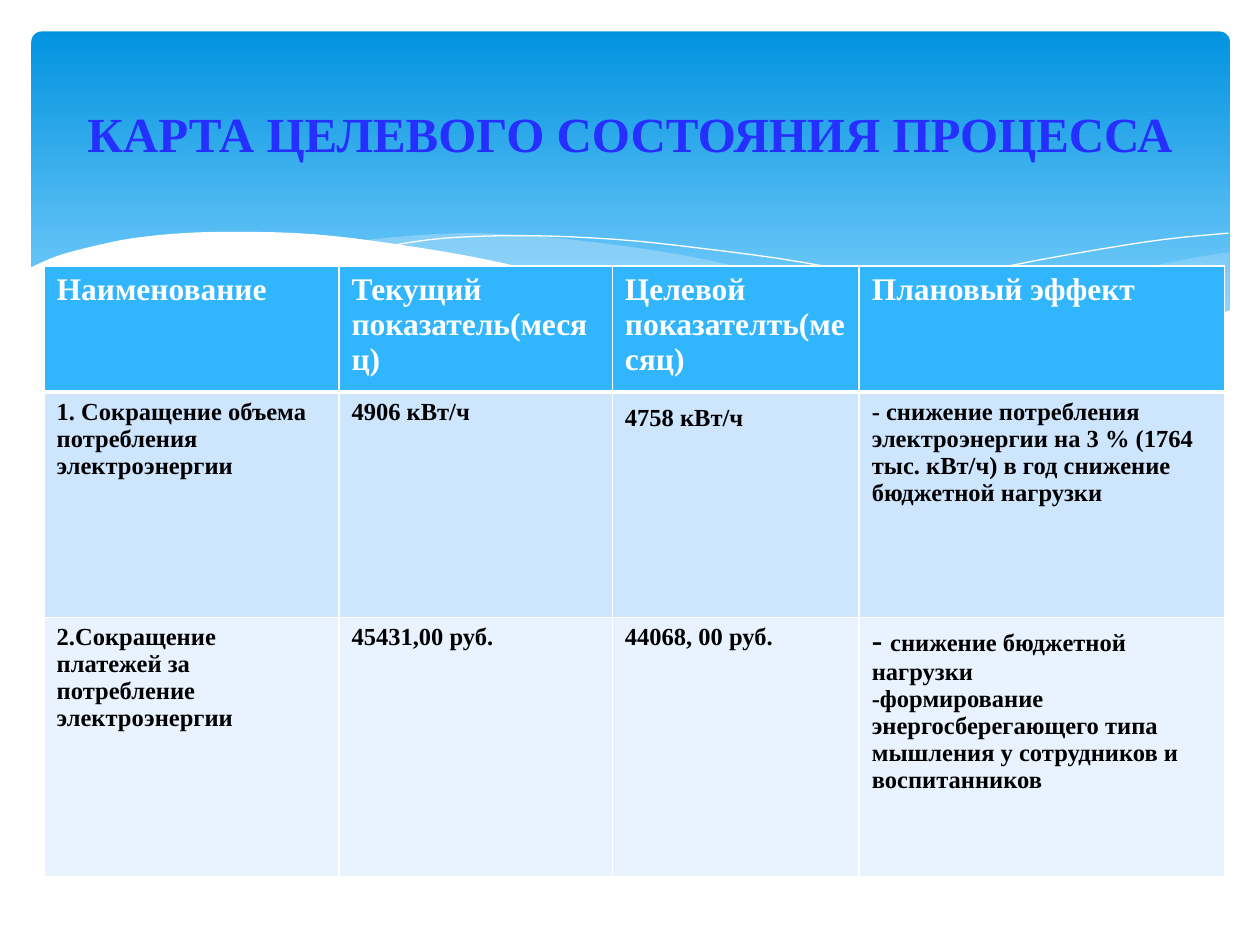
from dataclasses import dataclass
from typing import Optional

from lxml.etree import SubElement
from pptx import Presentation
from pptx.dml.color import RGBColor
from pptx.enum.shapes import MSO_SHAPE
from pptx.enum.text import MSO_ANCHOR, PP_ALIGN
from pptx.oxml.ns import qn
from pptx.util import Pt

PX = 9144  # 100 px to the inch
FONT = "Times New Roman"
WHITE = RGBColor(0xFF, 0xFF, 0xFF)
BLACK = RGBColor(0, 0, 0)
TITLE = RGBColor(0x25, 0x2F, 0xFF)
DEEP = RGBColor(0x02, 0x93, 0xE0)
LIGHT = RGBColor(0x83, 0xD3, 0xFE)
MIST = RGBColor(0xC6, 0xE7, 0xFC)
HEAD = RGBColor(0x31, 0xB6, 0xFD)
BANDS = (RGBColor(0xCE, 0xE5, 0xFE), RGBColor(0xE8, 0xF3, 0xFF))

Point = tuple[float, float]


@dataclass
class Wave:
    edges: list[list[Point]]  # each edge is a smooth curve through its knots
    fill: Optional[RGBColor] = None  # without a fill, the wave is a thin line
    alpha: int = 100


@dataclass
class Row:
    height: int
    fill: RGBColor
    color: RGBColor
    size: int
    texts: list[str]


WAVES = [
    Wave([[(976, 200), (935, 207), (876, 220), (805, 237), (729, 253), (661, 265)],
          [(661, 265), (719, 271), (781, 277), (824, 277), (881, 273), (935, 262),
           (976, 247)]], MIST, 29),
    Wave([[(893, 273), (807, 260), (706, 240), (629, 222), (569, 208), (514, 198),
           (442, 189), (380, 185), (328, 187), (286, 191)],
          [(286, 191), (362, 203), (449, 222), (566, 248), (650, 264), (736, 275),
           (807, 278), (867, 276), (893, 273)]], MIST, 40),
    Wave([[(309, 195), (353, 189), (416, 187), (489, 190), (556, 197), (636, 208),
           (727, 226), (795, 241), (869, 261), (907, 272)]]),
    Wave([[(613, 257), (672, 241), (748, 223), (806, 210), (866, 199), (924, 190),
           (975, 185)]]),
    Wave([[(977, 246), (920, 265), (863, 274), (809, 277), (744, 274), (668, 265),
           (579, 250), (475, 227), (391, 207), (316, 194), (250, 186), (193, 184),
           (146, 185), (106, 189), (76, 195), (46, 203), (23, 213)],
          [(23, 329), (977, 329)]], WHITE),
]

COLS = [234, 217, 196, 290]
ROWS = [
    Row(94, HEAD, WHITE, 18, [
        "Наименование", "Текущий показатель(месяц)",
        "Целевой показателть(месяц)", "Плановый эффект"]),
    Row(179, BANDS[0], BLACK, 14, [
        "1. Сокращение объема потребления электроэнергии", "4906 кВт/ч", "4758 кВт/ч",
        "- снижение потребления электроэнергии на 3 % (1764 тыс. кВт/ч) "
        "в год снижение бюджетной нагрузки"]),
    Row(206, BANDS[1], BLACK, 14, [
        "2.Сокращение платежей за потребление электроэнергии",
        "45431,00 руб.", "44068, 00 руб.",
        "- снижение бюджетной нагрузки\n-формирование энергосберегающего типа "
        "мышления у сотрудников и воспитанников"]),
]


def smooth(knots: list[Point], steps: int = 4) -> list[Point]:
    """Catmull-Rom curve through the knots; two knots give a straight edge."""
    if len(knots) < 3:
        return knots
    ends = [knots[0], *knots, knots[-1]]
    curve = [knots[0]]
    for a, b, c, d in zip(ends, ends[1:], ends[2:], ends[3:]):
        for step in range(1, steps + 1):
            t = step / steps
            x, y = (
                (2 * q + (r - p) * t + (2 * p - 5 * q + 4 * r - s) * t**2
                 + (3 * q - p - 3 * r + s) * t**3) / 2
                for p, q, r, s in zip(a, b, c, d))
            curve.append((x, y))
    return curve


def draw_wave(shapes, wave: Wave) -> None:
    dots = [(x * PX, y * PX) for edge in wave.edges for x, y in smooth(edge)]
    pen = shapes.build_freeform(*dots[0], scale=1.0)
    pen.add_line_segments(dots[1:], close=wave.fill is not None)
    shape = pen.convert_to_shape()
    shape.shadow.inherit = False
    if wave.fill is None:
        shape.fill.background()
        shape.line.color.rgb = WHITE
        shape.line.width = Pt(0)
        return
    shape.line.fill.background()
    shape.fill.solid()
    shape.fill.fore_color.rgb = wave.fill
    if wave.alpha < 100:
        color = shape.fill._xPr.find(f".//{qn('a:srgbClr')}")
        SubElement(color, qn("a:alpha"), val=str(wave.alpha * 1000))


def style(run, size: int, color: RGBColor) -> None:
    run.font.name = FONT
    run.font.size = Pt(size)
    run.font.bold = True
    run.font.color.rgb = color


def border(cell, side: str, width: int) -> None:
    line = SubElement(cell._tc.get_or_add_tcPr(), qn(f"a:ln{side}"), w=str(Pt(width)))
    fill = SubElement(line, qn("a:solidFill"))
    SubElement(fill, qn("a:srgbClr"), val=str(WHITE))


def draw_cell(cell, row: Row, text: str, rules: dict[str, int]) -> None:
    for side, width in rules.items():
        border(cell, side, width)
    cell.fill.solid()
    cell.fill.fore_color.rgb = row.fill
    cell.text_frame.text = text
    for para in cell.text_frame.paragraphs:
        for run in para.runs:
            style(run, row.size, row.color)


def draw_table(shapes, left: int, top: int):
    high = sum(row.height for row in ROWS)
    frame = shapes.add_table(len(ROWS), len(COLS), left * PX, top * PX,
                             sum(COLS) * PX, high * PX)
    table = frame.table
    table.horz_banding = False
    for col, width in zip(table.columns, COLS):
        col.width = width * PX
    for i, row in enumerate(ROWS):
        table.rows[i].height = row.height * PX
        rules = {"L": 1, "R": 1, "T": 3 if i == 1 else 1, "B": 3 if i == 0 else 1}
        for j, text in enumerate(row.texts):
            draw_cell(table.cell(i, j), row, text, rules)
    return table


def main() -> None:
    deck = Presentation()
    deck.slide_width, deck.slide_height = 1000 * PX, 750 * PX
    shapes = deck.slides.add_slide(deck.slide_layouts[6]).shapes

    # Gradient panel
    panel = shapes.add_shape(MSO_SHAPE.ROUNDED_RECTANGLE,
                             25 * PX, 25 * PX, 951 * PX, 270 * PX)
    panel.adjustments[0] = 0.03
    panel.shadow.inherit = False
    panel.line.fill.background()
    panel.fill.gradient()
    panel.fill.gradient_angle = 270
    for stop, color, place in zip(panel.fill.gradient_stops, (DEEP, LIGHT), (0, 0.9)):
        stop.color.rgb = color
        stop.position = place

    # Waves
    for wave in WAVES:
        draw_wave(shapes, wave)

    # Title
    frame = shapes.add_textbox(50 * PX, 37 * PX, 900 * PX, 137 * PX).text_frame
    frame.word_wrap = True
    frame.vertical_anchor = MSO_ANCHOR.MIDDLE
    frame.text = "КАРТА ЦЕЛЕВОГО СОСТОЯНИЯ ПРОЦЕССА"
    para = frame.paragraphs[0]
    para.alignment = PP_ALIGN.CENTER
    style(para.runs[0], 28, TITLE)

    # Table, with a lower target value and a larger first dash
    table = draw_table(shapes, 35, 211)
    table.cell(1, 2).margin_top = 10 * PX
    para = table.cell(2, 3).text_frame.paragraphs[0]
    rest = para.runs[0].text[2:]
    para.runs[0].text = "- "
    para.runs[0].font.size = Pt(18)
    tail = para.add_run()
    tail.text = rest
    style(tail, 14, BLACK)

    deck.save("out.pptx")


if __name__ == "__main__":
    main()
